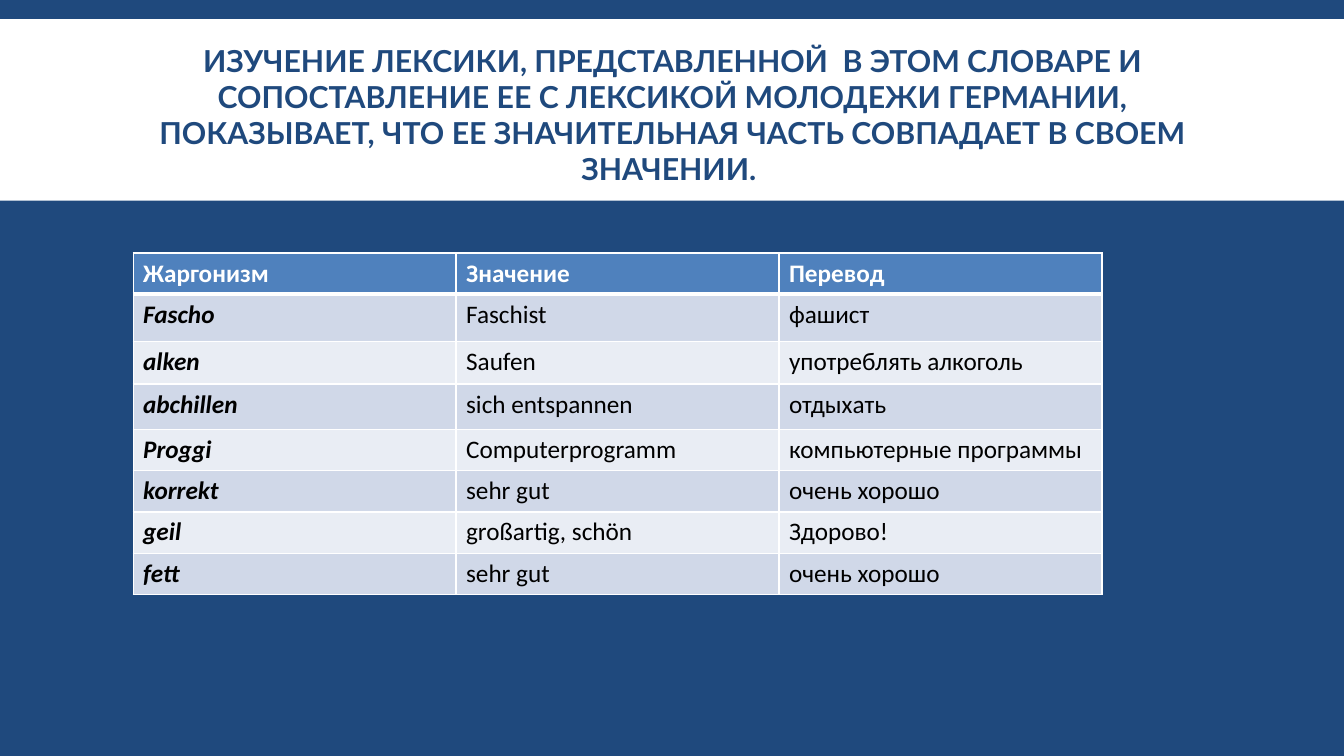
from typing import NamedTuple

from lxml import etree
from pptx import Presentation
from pptx.dml.color import RGBColor
from pptx.enum import shapes, text
from pptx.oxml import ns
from pptx.util import Inches, Pt

NAVY = RGBColor(0x1F, 0x49, 0x7D)
BLUE = RGBColor(0x4F, 0x81, 0xBD)
DARK = RGBColor(0xD0, 0xD8, 0xE8)
PALE = RGBColor(0xE9, 0xED, 0xF4)
WHITE = RGBColor(0xFF, 0xFF, 0xFF)
BLACK = RGBColor(0, 0, 0)

TITLE = ("ИЗУЧЕНИЕ ЛЕКСИКИ, ПРЕДСТАВЛЕННОЙ  В ЭТОМ СЛОВАРЕ И "
         "СОПОСТАВЛЕНИЕ ЕЕ С ЛЕКСИКОЙ МОЛОДЕЖИ ГЕРМАНИИ, "
         "ПОКАЗЫВАЕТ, ЧТО ЕЕ ЗНАЧИТЕЛЬНАЯ ЧАСТЬ СОВПАДАЕТ В СВОЕМ ЗНАЧЕНИИ. ")


class Entry(NamedTuple):
    slang: str
    sense: str
    gloss: str
    height: float = 0.41


ENTRIES = [
    Entry("Жаргонизм", "Значение", "Перевод"),
    Entry("Fascho", "Faschist", "фашист", 0.47),
    Entry("alken", "Saufen", "употреблять алкоголь", 0.42),
    Entry("abchillen", "sich entspannen", "отдыхать", 0.45),
    Entry("Proggi", "Computerprogramm", "компьютерные программы"),
    Entry("korrekt", "sehr gut", "очень хорошо"),
    Entry("geil", "großartig, schön", "Здорово!"),
    Entry("fett", "sehr gut", "очень хорошо"),
]


def write(frame, words: str, *, size: float = 18, font: str = "Calibri",
          color: RGBColor = BLACK, bold: bool = False, italic: bool = False,
          align=text.PP_ALIGN.LEFT) -> None:
    para = frame.paragraphs[0]
    para.alignment = align
    run = para.add_run()
    run.text = words
    run.font.size, run.font.name = Pt(size), font
    run.font.bold, run.font.italic = bold, italic
    run.font.color.rgb = color


def edge(cell, side: str, width: float) -> None:
    """Draw a white border on one side (L, R, T or B) of a cell."""
    props = cell._tc.get_or_add_tcPr()
    line = etree.SubElement(props, ns.qn(f"a:ln{side}"), w=str(Pt(width)))
    fill = etree.SubElement(line, ns.qn("a:solidFill"))
    etree.SubElement(fill, ns.qn("a:srgbClr"), val=str(WHITE))


def add_title(slide) -> None:
    title = slide.shapes.title
    title.left, title.top = Inches(1.32), Inches(0.31)
    title.width, title.height = Inches(10.7), Inches(1.65)
    frame = title.text_frame
    frame.word_wrap = True
    frame.auto_size = text.MSO_AUTO_SIZE.NONE
    frame.vertical_anchor = text.MSO_ANCHOR.MIDDLE
    write(frame, TITLE, size=21.6, font="Lato", color=NAVY, bold=True,
          align=text.PP_ALIGN.CENTER)


def add_band(slide) -> None:
    """Put the white band behind the title."""
    band = slide.shapes.add_shape(shapes.MSO_SHAPE.RECTANGLE, 0, Inches(0.19),
                                  Inches(13.33), Inches(1.8))
    band.shadow.inherit = False
    band.fill.solid()
    band.fill.fore_color.rgb = WHITE
    band.line.fill.background()
    slide.shapes.title.element.addprevious(band.element)


def add_words(slide) -> None:
    """Add the table of slang words."""
    total = sum(entry.height for entry in ENTRIES)
    table = slide.shapes.add_table(len(ENTRIES), 3, Inches(1.32), Inches(2.51),
                                   Inches(9.61), Inches(total)).table
    for r, entry in enumerate(ENTRIES):
        table.rows[r].height = Inches(entry.height)
        head = r == 0
        for c, words in enumerate((entry.slang, entry.sense, entry.gloss)):
            cell = table.cell(r, c)
            write(cell.text_frame, words, color=WHITE if head else BLACK,
                  bold=head or c == 0, italic=not head and c == 0)
            edge(cell, "L", 1)
            edge(cell, "R", 1)
            edge(cell, "T", 3 if r == 1 else 1)
            edge(cell, "B", 3 if head else 1)
            cell.fill.solid()
            cell.fill.fore_color.rgb = BLUE if head else DARK if r % 2 else PALE


def main() -> None:
    deck = Presentation()
    deck.slide_width, deck.slide_height = Inches(13.33), Inches(7.5)
    slide = deck.slides.add_slide(deck.slide_layouts.get_by_name("Title Only"))
    slide.background.fill.solid()
    slide.background.fill.fore_color.rgb = NAVY
    add_title(slide)
    add_band(slide)
    add_words(slide)
    deck.save("out.pptx")


if __name__ == "__main__":
    main()
